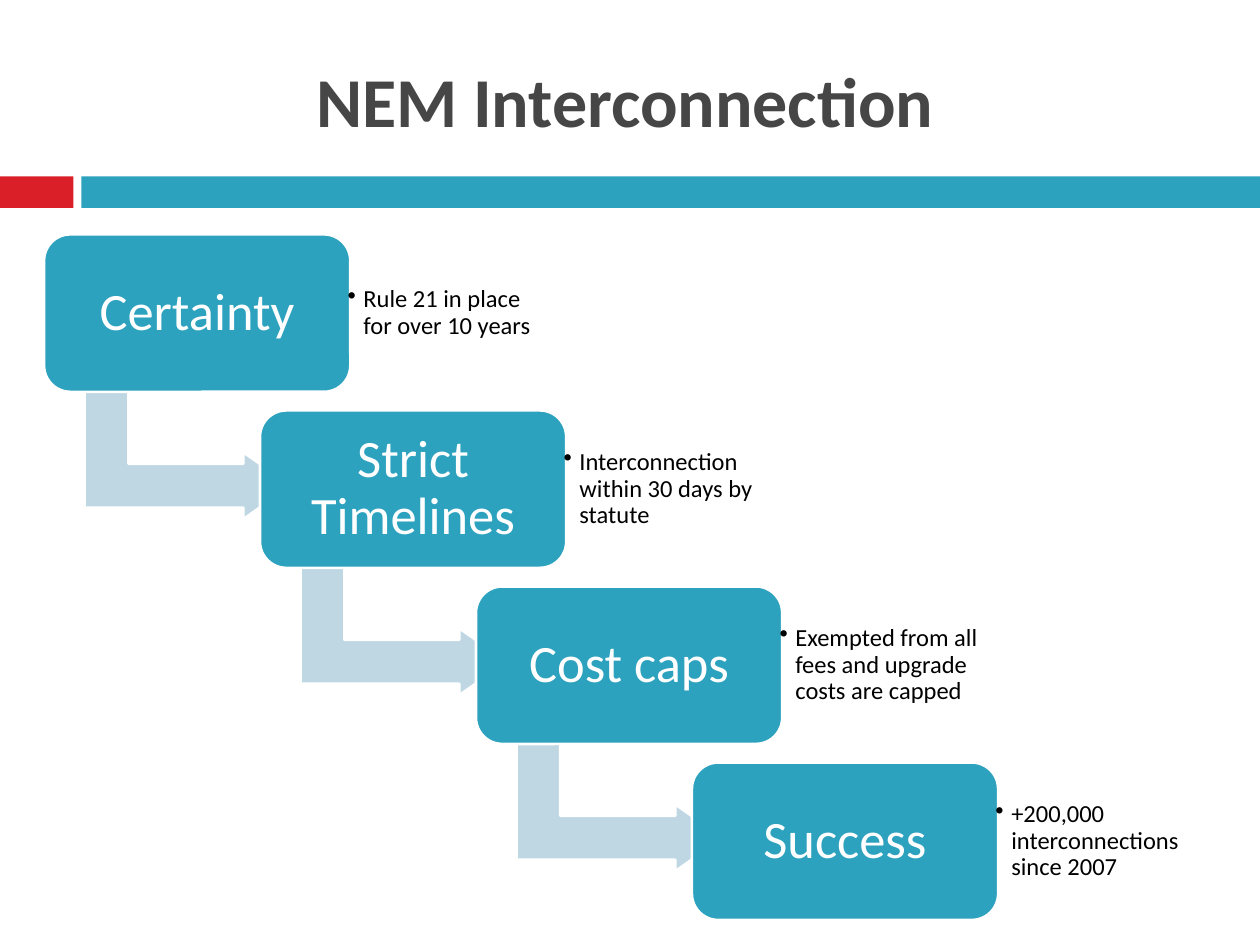
from lxml.etree import SubElement
from pptx import Presentation
from pptx.dml.color import RGBColor
from pptx.enum.shapes import MSO_SHAPE
from pptx.enum.text import MSO_ANCHOR, PP_ALIGN
from pptx.oxml.ns import qn
from pptx.util import Pt

COLORS = {"red": "DA1F28", "teal": "2DA2BF", "arrow": "BED7E2",
          "title": "464646", "white": "FFFFFF", "black": "000000"}
STEPS = [
    ("Certainty", "Rule 21 in place for over 10 years"),
    ("Strict Timelines", "Interconnection within 30 days by statute"),
    ("Cost caps", "Exempted from all fees and upgrade costs are capped"),
    ("Success", "+200,000 interconnections since 2007"),
]
LEFT, TOP = 25.2, 133.9
STEP_X, STEP_Y = 123.4, 100.6


def add_filled(kind, x, y, w, h, fill, outlined=True):
    sp = s.shapes.add_shape(kind, Pt(x), Pt(y), Pt(w), Pt(h))
    sp.shadow.inherit = False
    sp.fill.solid()
    sp.fill.fore_color.rgb = RGBColor.from_string(COLORS[fill])
    if outlined:
        sp.line.color.rgb = RGBColor.from_string(COLORS["white"])
        sp.line.width = Pt(1.5)
    else:
        sp.line.fill.background()
    return sp


def write(sp, text, size, color, align, inset, bold=False):
    """Fill a shape with one vertically centred paragraph and return it."""
    tf = sp.text_frame
    tf.word_wrap = True
    tf.vertical_anchor = MSO_ANCHOR.MIDDLE
    tf.margin_left = tf.margin_right = Pt(inset)
    tf.margin_top = tf.margin_bottom = Pt(inset)
    p = tf.paragraphs[0]
    p.alignment = align
    r = p.add_run()
    r.text = text
    r.font.name = "Calibri"
    r.font.size = Pt(size)
    r.font.bold = bold
    r.font.color.rgb = RGBColor.from_string(COLORS[color])
    return p


prs = Presentation()
prs.slide_width, prs.slide_height = Pt(720), Pt(540)
s = prs.slides.add_slide(prs.slide_layouts[5])

title = s.shapes.title
title.left, title.top, title.width, title.height = Pt(36), Pt(18), Pt(642), Pt(78)
write(title, "NEM Interconnection", 40, "title", PP_ALIGN.CENTER, 3.6, bold=True)

add_filled(MSO_SHAPE.RECTANGLE, 0, 100.8, 42, 18, "red", outlined=False)
add_filled(MSO_SHAPE.RECTANGLE, 46.5, 100.8, 673.5, 18, "teal", outlined=False)

for i, (heading, detail) in enumerate(STEPS):
    x, y = LEFT + i * STEP_X, TOP + i * STEP_Y

    if i < len(STEPS) - 1:
        arrow = add_filled(MSO_SHAPE.BENT_UP_ARROW, x + 44, y + 65.6, 76.3, 118, "arrow")
        arrow.rotation = 90
        for n, value in enumerate((0.328, 0.25, 0.358)):
            arrow.adjustments[n] = value

    box = add_filled(MSO_SHAPE.ROUNDED_RECTANGLE, x, y, 175, 90, "teal")
    box.adjustments[0] = 0.167
    p = write(box, heading, 30, "white", PP_ALIGN.CENTER, 8.6)
    p.line_spacing = 0.9

    note = s.shapes.add_textbox(Pt(x + 168.5), Pt(y + 8.6), Pt(127.4), Pt(72.7))
    p = write(note, detail, 14, "black", PP_ALIGN.LEFT, 5)
    p.line_spacing = 0.9
    p.level = 1
    pPr = p._p.get_or_add_pPr()
    pPr.set("marL", str(Pt(9)))
    pPr.set("indent", str(Pt(-9)))
    SubElement(pPr, qn("a:buChar")).set("char", "•")

prs.save("out.pptx")
